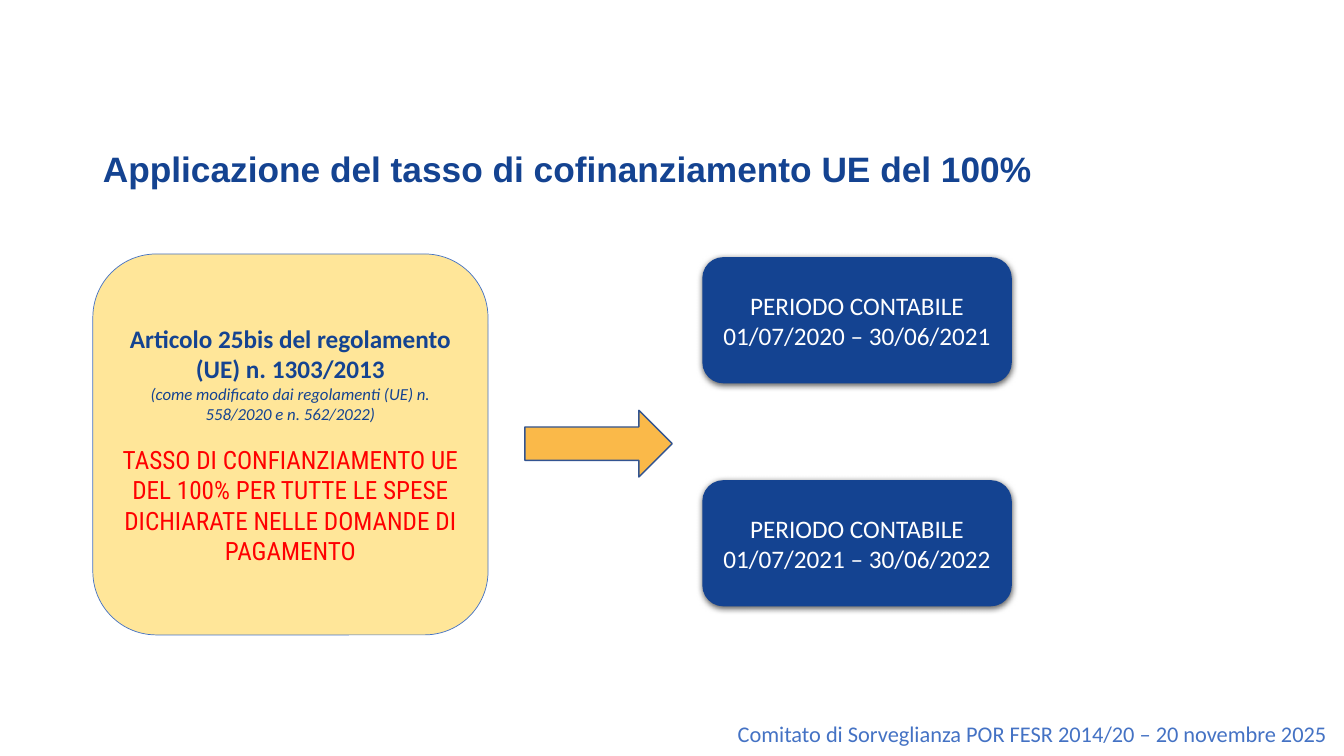
from lxml import etree
from pptx import Presentation
from pptx import util as u
from pptx.dml.color import RGBColor
from pptx.enum import shapes, text
from pptx.oxml import ns

NAVY = RGBColor(0x14, 0x43, 0x91)
BLUE = RGBColor(0x44, 0x72, 0xC4)
ARROW_BLUE = RGBColor(0x32, 0x54, 0x91)
CREAM = RGBColor(0xFF, 0xE6, 0x99)
ORANGE = RGBColor(0xFA, 0xB9, 0x49)
RED = RGBColor(0xFF, 0x00, 0x00)
WHITE = RGBColor(0xFF, 0xFF, 0xFF)
BLACK = RGBColor(0x00, 0x00, 0x00)

PERIODS = ["01/07/2020 – 30/06/2021", "01/07/2021 – 30/06/2022"]


def format_runs(paragraph, size, color, name="Calibri", bold=False, italic=False):
    for run in paragraph.runs:
        font = run.font
        font.name, font.size, font.bold, font.italic = name, u.Pt(size), bold, italic
        font.color.rgb = color


def add_filled_shape(slide, kind, box, fill, line=None, line_width=0):
    """Add a flat shape in box (left, top, width, height); no line means no outline."""
    shape = slide.shapes.add_shape(kind, *box)
    shape.shadow.inherit = False
    shape.fill.solid()
    shape.fill.fore_color.rgb = fill
    if line is None:
        shape.line.fill.background()
    else:
        shape.line.color.rgb = line
        shape.line.width = u.Pt(line_width)
    return shape


def add_soft_shadow(shape):
    """Give the shape a soft shadow that falls straight down."""
    effects = shape._element.spPr.find(ns.qn("a:effectLst"))
    shadow = etree.SubElement(
        effects, ns.qn("a:outerShdw"), blurRad=str(u.Pt(4.5)), dist=str(u.Pt(1.5)),
        dir="5400000", algn="ctr", rotWithShape="0")
    color = etree.SubElement(shadow, ns.qn("a:srgbClr"), val=str(BLACK))
    etree.SubElement(color, ns.qn("a:alpha"), val="63000")


def place_title(slide, box):
    title = slide.shapes.title
    title.left, title.top, title.width, title.height = box
    frame = title.text_frame
    frame.text = "Applicazione del tasso di cofinanziamento UE del 100%"
    frame.auto_size = text.MSO_AUTO_SIZE.NONE
    frame.vertical_anchor = text.MSO_ANCHOR.BOTTOM
    frame.margin_bottom = 0
    paragraph = frame.paragraphs[0]
    paragraph.alignment = text.PP_ALIGN.LEFT
    paragraph.line_spacing = 0.9
    format_runs(paragraph, 25.2, NAVY, "Arial", bold=True)


def add_article_card(slide, box):
    card = add_filled_shape(slide, shapes.MSO_SHAPE.ROUNDED_RECTANGLE, box, CREAM, BLUE, 0.5)
    frame = card.text_frame
    frame.text = "\n".join([
        "Articolo 25bis del regolamento (UE) n. 1303/2013",
        "(come modificato dai regolamenti (UE) n. 558/2020 e n. 562/2022)",
        "TASSO DI CONFIANZIAMENTO UE DEL 100% PER TUTTE LE SPESE "
        "DICHIARATE NELLE DOMANDE DI PAGAMENTO"])
    article, amendment, rate = frame.paragraphs
    for paragraph in frame.paragraphs:
        paragraph.alignment = text.PP_ALIGN.CENTER
    format_runs(article, 18, NAVY, bold=True)
    format_runs(amendment, 12, NAVY, italic=True)
    format_runs(rate, 18, RED, "Roboto Condensed")
    rate.space_before = u.Pt(14.4)


def add_period_cards(slide, box):
    """Stack one card per accounting period, from the top to the bottom of box."""
    left, top, width, height = box
    card_height = u.Cm(3.18)
    step = (height - card_height) // (len(PERIODS) - 1)
    for index, period in enumerate(PERIODS):
        card = add_filled_shape(slide, shapes.MSO_SHAPE.ROUNDED_RECTANGLE,
                                (left, top + index * step, width, card_height), NAVY)
        add_soft_shadow(card)
        card.text_frame.text = f"PERIODO CONTABILE\n{period}"
        for paragraph in card.text_frame.paragraphs:
            paragraph.alignment = text.PP_ALIGN.CENTER
            format_runs(paragraph, 18, WHITE)


def add_event_line(slide, box):
    frame = slide.shapes.add_textbox(*box).text_frame
    frame.word_wrap = True
    frame.auto_size = text.MSO_AUTO_SIZE.SHAPE_TO_FIT_TEXT
    frame.margin_right = u.Cm(0.42)
    frame.text = "Comitato di Sorveglianza POR FESR 2014/20 – 20 novembre 2025"
    frame.paragraphs[0].alignment = text.PP_ALIGN.RIGHT
    format_runs(frame.paragraphs[0], 16, BLUE)


def cm_box(*lengths):
    return [u.Cm(length) for length in lengths]


def main():
    presentation = Presentation()
    presentation.slide_width, presentation.slide_height = u.Cm(33.87), u.Cm(19.05)
    title_only = presentation.slide_layouts.get_by_name("Title Only")
    slide = presentation.slides.add_slide(title_only)
    place_title(slide, cm_box(2.34, 1.02, 29.21, 3.78))
    add_article_card(slide, cm_box(2.34, 6.4, 9.96, 9.6))
    add_filled_shape(slide, shapes.MSO_SHAPE.RIGHT_ARROW,
                     cm_box(13.23, 10.34, 3.71, 1.68), ORANGE, ARROW_BLUE, 1)
    add_period_cards(slide, cm_box(17.7, 6.48, 7.8, 8.8))
    add_event_line(slide, cm_box(14.71, 18.03, 19.15, 0.94))
    presentation.save("out.pptx")


if __name__ == "__main__":
    main()
